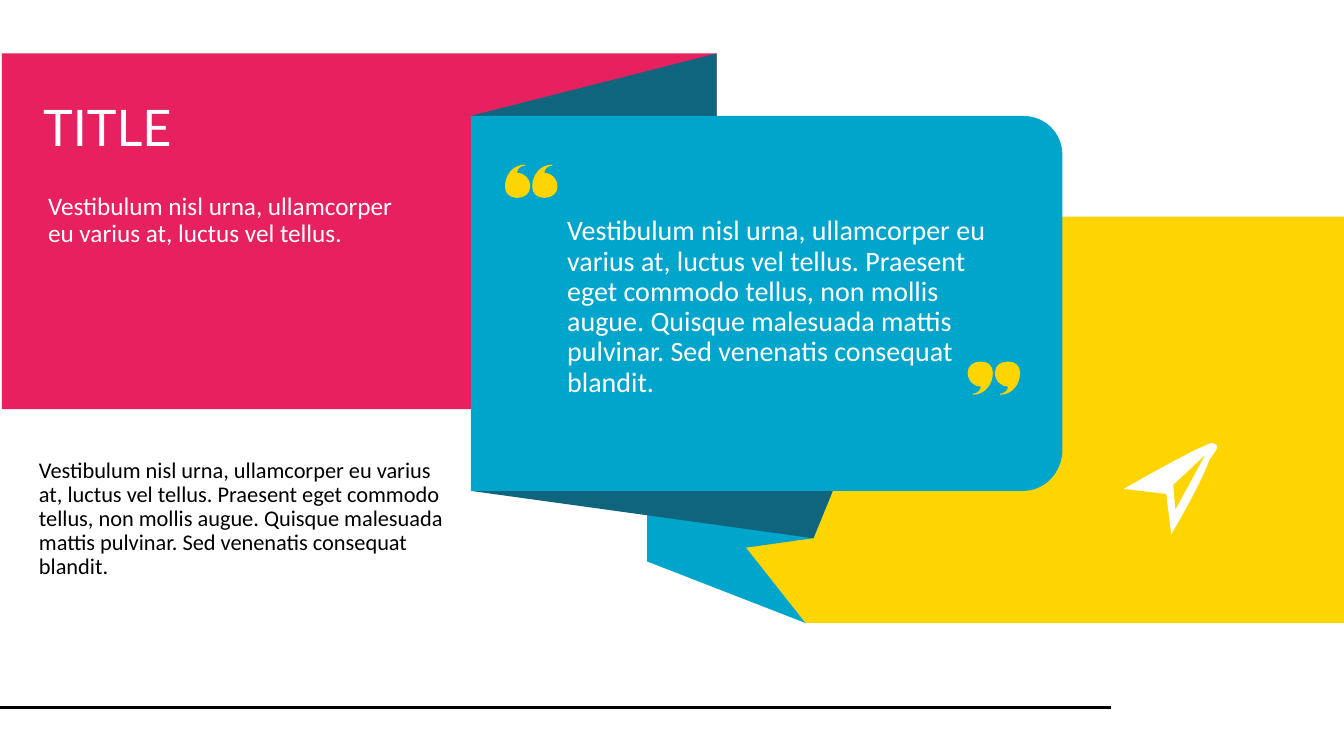
from dataclasses import dataclass

from lxml import etree
from pptx import Presentation
from pptx import util as u
from pptx.dml.color import RGBColor
from pptx.enum import shapes, text
from pptx.oxml.ns import qn

COLS, ROWS = 40, 22.5
CELL = u.Inches(13.333) / COLS


@dataclass(frozen=True)
class Theme:
    pink: str = "E7205F"
    cyan: str = "00A5CC"
    fold: str = "0F657D"
    yellow: str = "FFD500"
    white: str = "FFFFFF"
    black: str = "000000"
    heading_font: str = "Lato"
    body_font: str = "Calibri"
    title: int = 36
    quote: int = 20
    lead: int = 18
    body: int = 16


T = Theme()
LEAD = "Vestibulum nisl urna, ullamcorper eu varius at, luctus vel tellus."
PASSAGE = (LEAD + " Praesent eget commodo tellus, non mollis augue. Quisque malesuada"
           " mattis pulvinar. Sed venenatis consequat blandit.")

CARD = [(14.01, 14.61), (14.01, 3.45), (30.45, 3.45),
        (31.11, 3.45, 31.62, 3.96, 31.62, 4.62), (31.62, 13.38),
        (31.62, 14.04, 31.11, 14.61, 30.45, 14.61)]
QUOTE = [(0.36, 0.24), (0.36, 0.15, 0.45, 0.03, 0.6, 0.03), (0.6, 0),
         (0.24, 0, 0, 0.3, 0, 0.66), (0, 0.87, 0.15, 0.99, 0.36, 0.99),
         (0.57, 0.99, 0.75, 0.87, 0.75, 0.66), (0.75, 0.42, 0.57, 0.24, 0.36, 0.24)]
PLANE = [(36.18, 13.23), (36.06, 13.11, 36, 13.23, 35.67, 13.35),
         (34.86, 13.74, 33.45, 14.55, 33.45, 14.55), (34.71, 14.7), (34.86, 15.9),
         (34.86, 15.9, 35.67, 14.55, 36, 13.68),
         (36.18, 13.41, 36.3, 13.29, 36.18, 13.23)]
PLANE_FOLD = [(35.88, 13.53), (34.98, 15.18), (34.92, 14.43)]


def cells(*values):
    return [u.Emu(round(v * CELL)) for v in values]


def rgb(color):
    return RGBColor.from_string(color)


def paint(sp, color):
    sp.shadow.inherit = False
    sp.fill.solid()
    sp.fill.fore_color.rgb = rgb(color)
    sp.line.fill.background()


def split_points(step):
    return [cells(*step[i:i + 2]) for i in range(0, len(step), 2)]


def bend(sp, steps):
    segments = iter(list(sp._element.iter(qn("a:lnTo"))))
    for step in steps:
        group = [next(segments) for _ in range(len(step) // 2)]
        if len(group) == 3:
            curve = etree.Element(qn("a:cubicBezTo"))
            group[0].addprevious(curve)
            for segment in group:
                curve.append(segment[0])
                segment.getparent().remove(segment)


def add_outline(s, color, *contours):
    builder = None
    for start, *steps in contours:
        if builder is None:
            builder = s.shapes.build_freeform(*cells(*start), scale=1.0)
        else:
            builder.move_to(*cells(*start))
        points = [pt for step in steps for pt in split_points(step)]
        builder.add_line_segments(points, close=True)
    sp = builder.convert_to_shape()
    bend(sp, [step for contour in contours for step in contour[1:]])
    paint(sp, color)


def add_quote_pair(s, x, y, turn=1):
    for left in (x, x + 0.81):
        steps = [tuple((left, y)[i % 2] + turn * v for i, v in enumerate(step))
                 for step in QUOTE]
        add_outline(s, T.yellow, steps)


def add_rule(s, y, x_end):
    line = s.shapes.add_connector(shapes.MSO_CONNECTOR.STRAIGHT, *cells(0, y, x_end, y))
    line.line.color.rgb = rgb(T.black)
    line.line.width = u.Pt(2.25)
    etree.SubElement(line._element.spPr, qn("a:effectLst"))


def fill_placeholder(sp, box, words, size, color, font):
    sp._element.getparent().append(sp._element)
    sp.left, sp.top, sp.width, sp.height = cells(*box)
    tf = sp.text_frame
    tf.word_wrap = True
    tf.auto_size = text.MSO_AUTO_SIZE.NONE
    tf.vertical_anchor = text.MSO_ANCHOR.TOP
    p = tf.paragraphs[0]
    p.alignment = text.PP_ALIGN.LEFT
    p.line_spacing = 0.9
    p.space_before = u.Pt(10)
    pPr = p._p.get_or_add_pPr()
    pPr.set("marL", "0")
    pPr.set("indent", "0")
    etree.SubElement(pPr, qn("a:buNone"))
    r = p.add_run()
    r.text = words
    r.font.size = u.Pt(size)
    r.font.bold = False
    r.font.name = font
    r.font.color.rgb = rgb(color)


def add_ribbon(s):
    add_outline(s, T.yellow, [(40, 18.54), (23.97, 18.54), (19.83, 16.65),
                              (21.9, 6.45), (40, 6.45)])
    panel = s.shapes.add_shape(shapes.MSO_SHAPE.RECTANGLE,
                               *cells(0.06, 1.59, 21.27, 10.59))
    paint(panel, T.pink)
    add_outline(s, T.fold, [(21.33, 6.12), (21.33, 1.59), (14.01, 3.45)])
    add_outline(s, T.cyan, [(19.26, 16.71), (21.39, 15.27), (23.97, 18.54)])
    add_outline(s, T.cyan, [(25.41, 13.08), (24.21, 16.02), (19.26, 16.71),
                            (19.26, 14.34)])
    add_outline(s, T.fold, [(25.41, 13.08), (24.21, 16.02), (14.01, 14.61)])
    add_outline(s, T.cyan, CARD)


def main():
    prs = Presentation()
    prs.slide_width, prs.slide_height = cells(COLS, ROWS)
    s = prs.slides.add_slide(prs.slide_layouts.get_by_name("Comparison"))
    title, lead, quote, body, spare = s.placeholders
    spare._element.getparent().remove(spare._element)

    add_ribbon(s)
    fill_placeholder(title, (0.98, 2.91, 13.56, 2.19), "TITLE",
                     T.title, T.white, T.heading_font)
    fill_placeholder(lead, (1.13, 5.61, 11.4, 3.75), LEAD,
                     T.lead, T.white, T.body_font)
    fill_placeholder(quote, (16.58, 6.3, 13.68, 6.15), PASSAGE,
                     T.quote, T.white, T.body_font)
    add_quote_pair(s, 15.03, 4.9)
    add_quote_pair(s, 29.55, 11.75, turn=-1)
    fill_placeholder(body, (0.86, 13.51, 12.84, 5.34), PASSAGE,
                     T.body, T.black, T.body_font)
    add_outline(s, T.white, PLANE, PLANE_FOLD)
    add_rule(s, 21.06, 33.06)
    prs.save("out.pptx")


if __name__ == "__main__":
    main()
